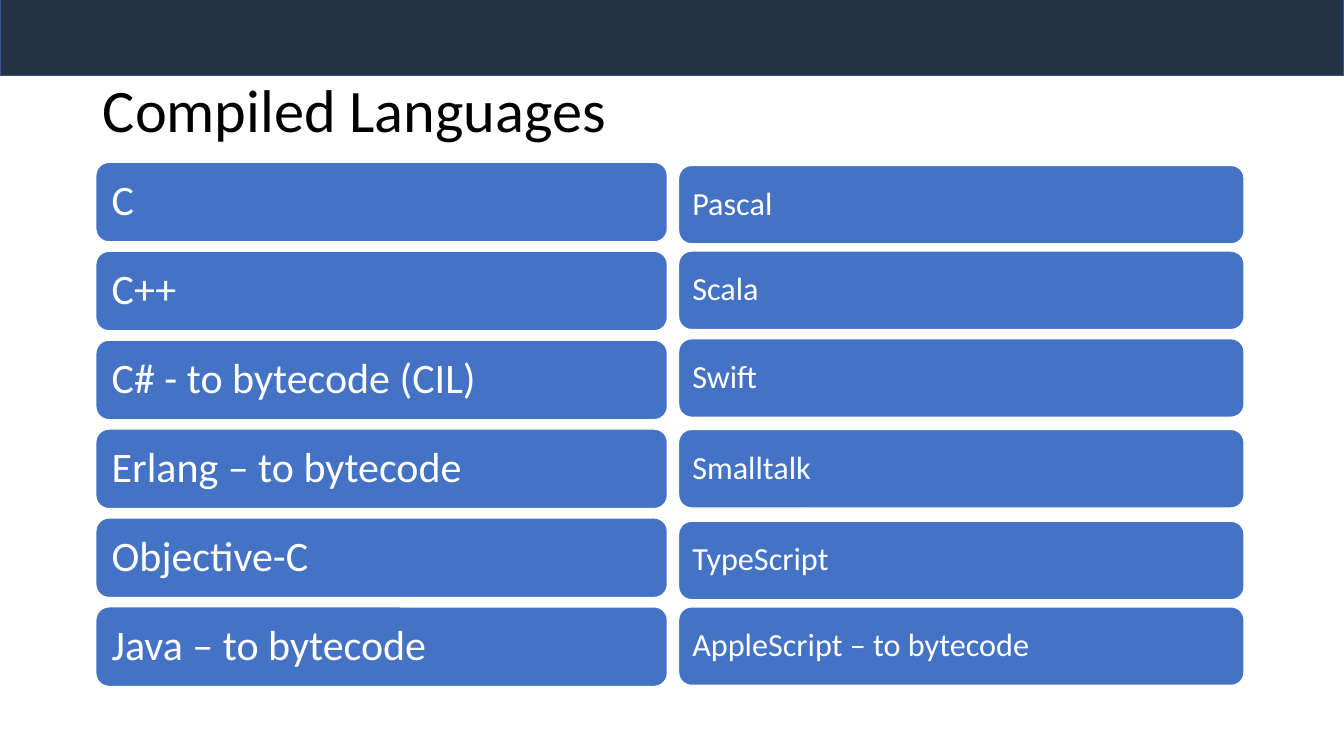
from dataclasses import dataclass
from typing import Any

from pptx import Presentation
from pptx.dml.color import RGBColor
from pptx.enum.shapes import MSO_SHAPE
from pptx.enum.text import MSO_ANCHOR, MSO_AUTO_SIZE, PP_ALIGN
from pptx.shapes.autoshape import Shape
from pptx.slide import Slide
from pptx.util import Inches, Pt

RECT = MSO_SHAPE.RECTANGLE
ROUND = MSO_SHAPE.ROUNDED_RECTANGLE
MIDDLE = MSO_ANCHOR.MIDDLE
LEFT = PP_ALIGN.LEFT
NO_FIT = MSO_AUTO_SIZE.NONE

NAVY = RGBColor(0x22, 0x33, 0x46)
EDGE = RGBColor(0x32, 0x54, 0x91)
BLUE = RGBColor(0x44, 0x72, 0xC4)
WHITE = RGBColor(0xFF, 0xFF, 0xFF)
BLACK = RGBColor(0x00, 0x00, 0x00)

FONT = "Calibri"
STEP = (6.02 - 1.61) / 5


@dataclass(frozen=True)
class Column:
    left: float
    width: float
    height: float
    inset: float
    size: float
    tops: list[float]
    names: list[str]


COLUMNS = [
    Column(0.95, 5.67, 0.79, 0.12, 30,
           [1.61 + STEP * row for row in range(6)],
           ["C", "C++", "C# - to bytecode (CIL)", "Erlang – to bytecode",
            "Objective-C", "Java – to bytecode"]),
    Column(6.73, 5.61, 0.78, 0.1, 23,
           [1.64, 2.49, 3.36, 4.26, 5.17, 6.02],
           ["Pascal", "Scala", "Swift", "Smalltalk", "TypeScript",
            "AppleScript – to bytecode"]),
]


def apply(target: Any, values: dict[str, Any]) -> None:
    for name, value in values.items():
        setattr(target, name, value)


def place(shape: Any, left: float, top: float, width: float,
          height: float) -> None:
    apply(shape, {"left": Inches(left), "top": Inches(top),
                  "width": Inches(width), "height": Inches(height)})


def write(shape: Any, text: str, size: float, color: RGBColor,
          inset: float) -> None:
    frame = shape.text_frame
    frame.text = text
    sides = ("left", "top", "right", "bottom")
    apply(frame, {f"margin_{side}": Inches(inset) for side in sides})
    apply(frame, {"word_wrap": True, "auto_size": NO_FIT,
                  "vertical_anchor": MIDDLE})
    line = frame.paragraphs[0]
    apply(line, {"alignment": LEFT, "line_spacing": 0.9})
    font = line.runs[0].font
    apply(font, {"name": FONT, "size": Pt(size)})
    font.color.rgb = color


def draw(slide: Slide, kind: MSO_SHAPE, left: float, top: float,
         width: float, height: float, fill: RGBColor,
         edge: RGBColor) -> Shape:
    shape = slide.shapes.add_shape(kind, 0, 0, 0, 0)
    place(shape, left, top, width, height)
    shape.shadow.inherit = False
    shape.fill.solid()
    shape.fill.fore_color.rgb = fill
    shape.line.color.rgb = edge
    shape.line.width = Pt(1)
    return shape


def stack(slide: Slide, col: Column) -> None:
    for top, name in zip(col.tops, col.names):
        box = draw(slide, ROUND, col.left, top, col.width, col.height,
                   BLUE, WHITE)
        write(box, name, col.size, WHITE, col.inset)


def main() -> None:
    deck = Presentation()
    apply(deck, {"slide_width": Inches(13.33), "slide_height": Inches(7.5)})
    slide = deck.slides.add_slide(deck.slide_layouts[5])
    title = slide.shapes.title
    place(title, 0.92, 0.4, 11.5, 1.45)
    write(title, "Compiled Languages", 43.1, BLACK, 0.1)
    bar = draw(slide, RECT, 0, -0.03, 13.33, 0.78, NAVY, EDGE)
    title.element.addprevious(bar.element)
    for col in COLUMNS:
        stack(slide, col)
    deck.save("out.pptx")


if __name__ == "__main__":
    main()
